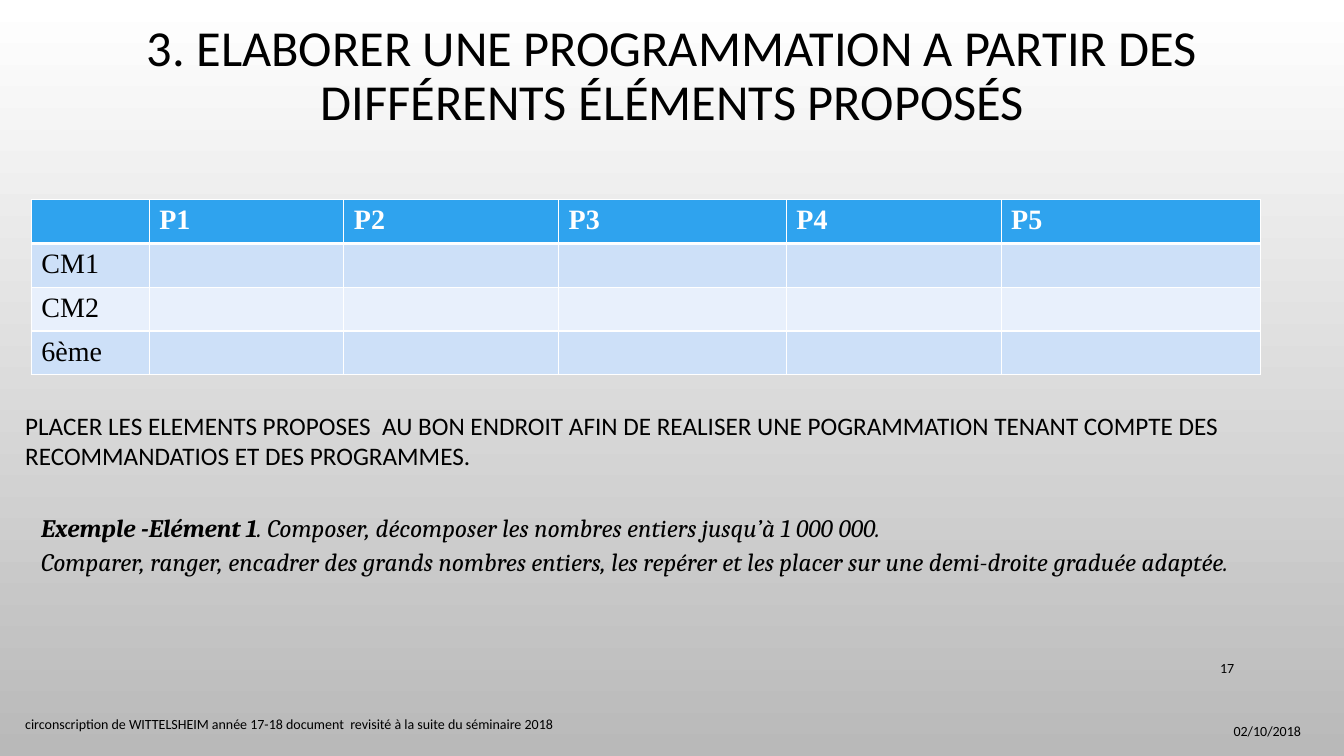
from lxml.etree import SubElement
from pptx import Presentation
from pptx.dml.color import RGBColor
from pptx.enum.text import MSO_ANCHOR, MSO_AUTO_SIZE, PP_ALIGN
from pptx.oxml.ns import qn
from pptx.util import Inches, Pt

BLACK = RGBColor(0x00, 0x00, 0x00)
WHITE = RGBColor(0xFF, 0xFF, 0xFF)
GREY = RGBColor(0xB9, 0xB9, 0xB9)
HEADER_BLUE = RGBColor(0x2F, 0xA3, 0xEE)
BAND_BLUE = RGBColor(0xCD, 0xE0, 0xF8)
PALE_BLUE = RGBColor(0xE8, 0xF0, 0xFC)

SLIDE_WIDTH, SLIDE_HEIGHT = Inches(13.33), Inches(7.5)
COLUMN, ROW = SLIDE_WIDTH / 100, SLIDE_HEIGHT / 100

TITLE = {"name": "Calibri", "size": Pt(36)}
INSTRUCTION = {"name": "Calibri", "size": Pt(18)}
SMALL = {"name": "Calibri", "size": Pt(10)}
EXAMPLE = {"name": "Cambria", "size": Pt(18), "italic": True}
EXAMPLE_LABEL = {**EXAMPLE, "bold": True}
LEVEL = {"name": "Times New Roman", "size": Pt(20), "bold": False}
PERIOD = {**LEVEL, "bold": True}

PERIODS = ["", "P1", "P2", "P3", "P4", "P5"]
LEVELS = ["CM1", "CM2", "6ème"]
PERIOD_COLUMNS = [8.78, 14.48, 15.98, 16.95, 15.98, 19.28]
LEVEL_ROWS = 5.8


def columns(count):
    return round(count * COLUMN)


def rows(count):
    return round(count * ROW)


def apply(target, formats):
    for attribute, value in formats.items():
        setattr(target, attribute, value)


def add_run(paragraph, words, font_format, color=BLACK):
    run = paragraph.add_run()
    run.text = words
    apply(run.font, font_format)
    run.font.color.rgb = color


def add_text(slide, place, paragraphs, frame_format, *paragraph_formats):
    left, top, width, height = place
    frame = slide.shapes.add_textbox(
        columns(left), rows(top), columns(width), rows(height)
    ).text_frame
    apply(frame, {"word_wrap": True, **frame_format})
    for index, pieces in enumerate(paragraphs):
        paragraph = frame.add_paragraph() if index else frame.paragraphs[0]
        if index < len(paragraph_formats):
            apply(paragraph, paragraph_formats[index])
        for words, font_format in pieces:
            add_run(paragraph, words, font_format)


def add_border(cell, side, points):
    line = SubElement(cell._tc.get_or_add_tcPr(), qn(f"a:{side}"), w=str(Pt(points)))
    color = SubElement(SubElement(line, qn("a:solidFill")), qn("a:srgbClr"))
    color.set("val", str(WHITE))


def fill_cell(cell, words, level, font_format, color, background):
    top, bottom = (3 if level == 1 else 1), (3 if level == 0 else 1)
    for side, points in {"lnL": 1, "lnR": 1, "lnT": top, "lnB": bottom}.items():
        add_border(cell, side, points)
    cell.fill.solid()
    cell.fill.fore_color.rgb = background
    if words:
        add_run(cell.text_frame.paragraphs[0], words, font_format, color)


def add_programme(slide, left, top):
    grid = [PERIODS] + [[level] + [""] * (len(PERIODS) - 1) for level in LEVELS]
    programme = slide.shapes.add_table(
        len(grid), len(PERIODS), columns(left), rows(top),
        columns(sum(PERIOD_COLUMNS)), rows(LEVEL_ROWS * len(grid)),
    ).table
    for period, width in zip(programme.columns, PERIOD_COLUMNS):
        period.width = columns(width)
    for level, entries in enumerate(grid):
        programme.rows[level].height = rows(LEVEL_ROWS)
        if level == 0:
            look = PERIOD, WHITE, HEADER_BLUE
        else:
            look = LEVEL, BLACK, BAND_BLUE if level % 2 else PALE_BLUE
        for period, words in enumerate(entries):
            fill_cell(programme.cell(level, period), words, level, *look)


def shade_background(slide):
    shade = slide.background.fill
    shade.gradient()
    shade.gradient_angle = 270
    for stop, color in zip(shade.gradient_stops, (WHITE, GREY)):
        stop.color.rgb = color


def main():
    presentation = Presentation()
    apply(presentation, {"slide_width": SLIDE_WIDTH, "slide_height": SLIDE_HEIGHT})
    slide = presentation.slides.add_slide(presentation.slide_layouts[6])
    shade_background(slide)

    middle = {"vertical_anchor": MSO_ANCHOR.MIDDLE}
    grow = {"auto_size": MSO_AUTO_SIZE.SHAPE_TO_FIT_TEXT}
    right = {"alignment": PP_ALIGN.RIGHT}

    add_text(
        slide, (3.38, 2, 93.32, 16.4),
        [[("3. ELABORER UNE PROGRAMMATION A PARTIR DES DIFFÉRENTS ÉLÉMENTS PROPOSÉS", TITLE)]],
        middle, {"alignment": PP_ALIGN.CENTER, "line_spacing": 0.9},
    )
    add_programme(slide, 2.33, 26.4)
    add_text(
        slide, (1.13, 53.6, 95.65, 9.47),
        [[("PLACER LES ELEMENTS PROPOSES  AU BON ENDROIT AFIN DE REALISER UNE POGRAMMATION "
           "TENANT COMPTE DES RECOMMANDATIOS ET DES PROGRAMMES.", INSTRUCTION)]],
        grow,
    )
    add_text(
        slide, (2.33, 67.07, 94.37, 10),
        [
            [("Exemple -Elément 1", EXAMPLE_LABEL),
             (". Composer, décomposer les nombres entiers jusqu’à 1 000 000.", EXAMPLE)],
            [("Comparer, ranger, encadrer des grands nombres entiers, les repérer "
              "et les placer sur une demi-droite graduée adaptée.", EXAMPLE)],
        ],
        grow, {}, {"line_spacing": 1.15, "space_after": Pt(10)},
    )
    add_text(slide, (86.27, 85.73, 6.3, 5.33), [[("17", SMALL)]], middle, right)
    add_text(
        slide, (1.13, 93.07, 54.76, 5.33),
        [[("circonscription de WITTELSHEIM année 17-18 document  revisité "
           "à la suite du séminaire 2018", SMALL)]],
        middle,
    )
    add_text(slide, (75.02, 94, 22.51, 5.33), [[("02/10/2018", SMALL)]], middle, right)
    presentation.save("out.pptx")


if __name__ == "__main__":
    main()
